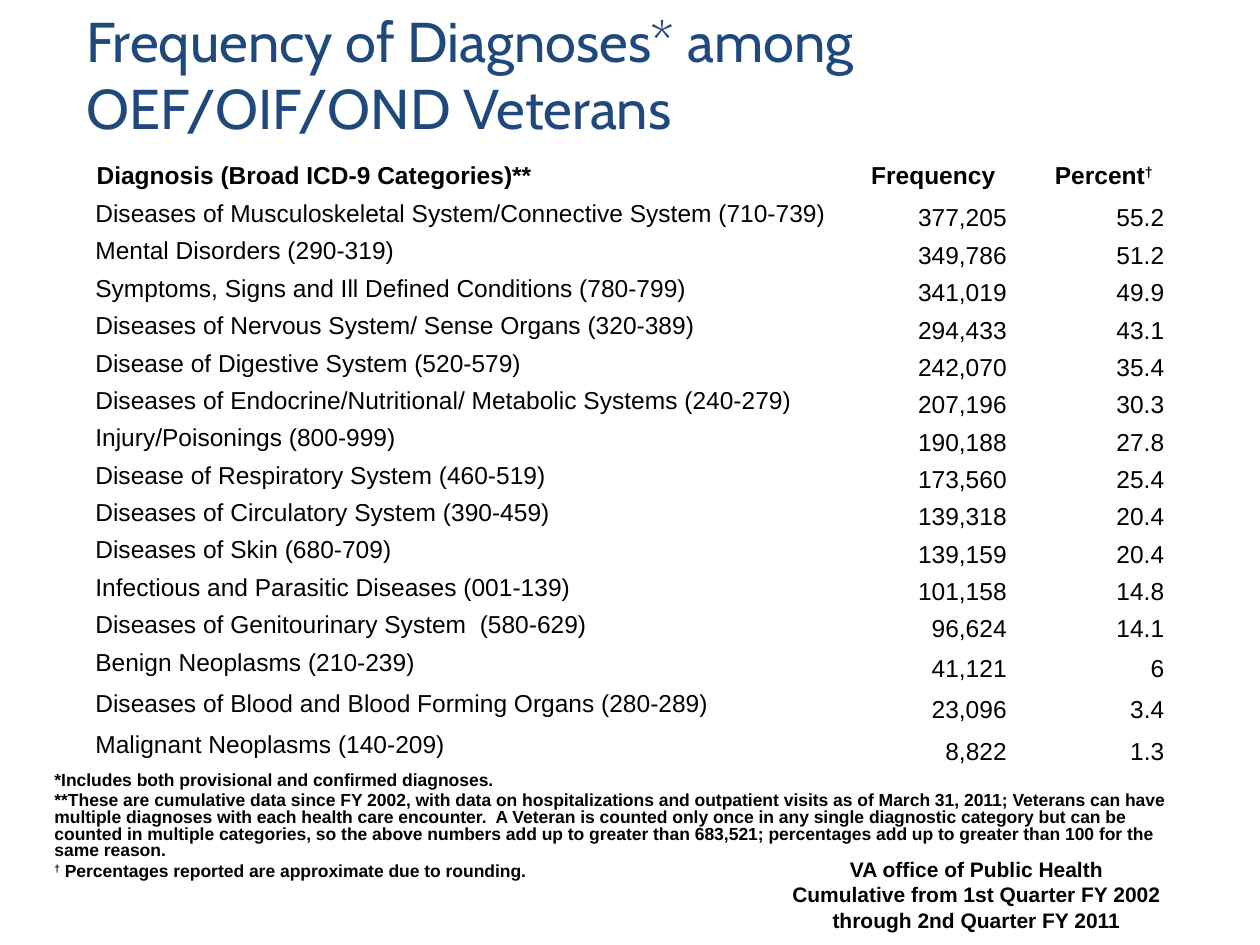
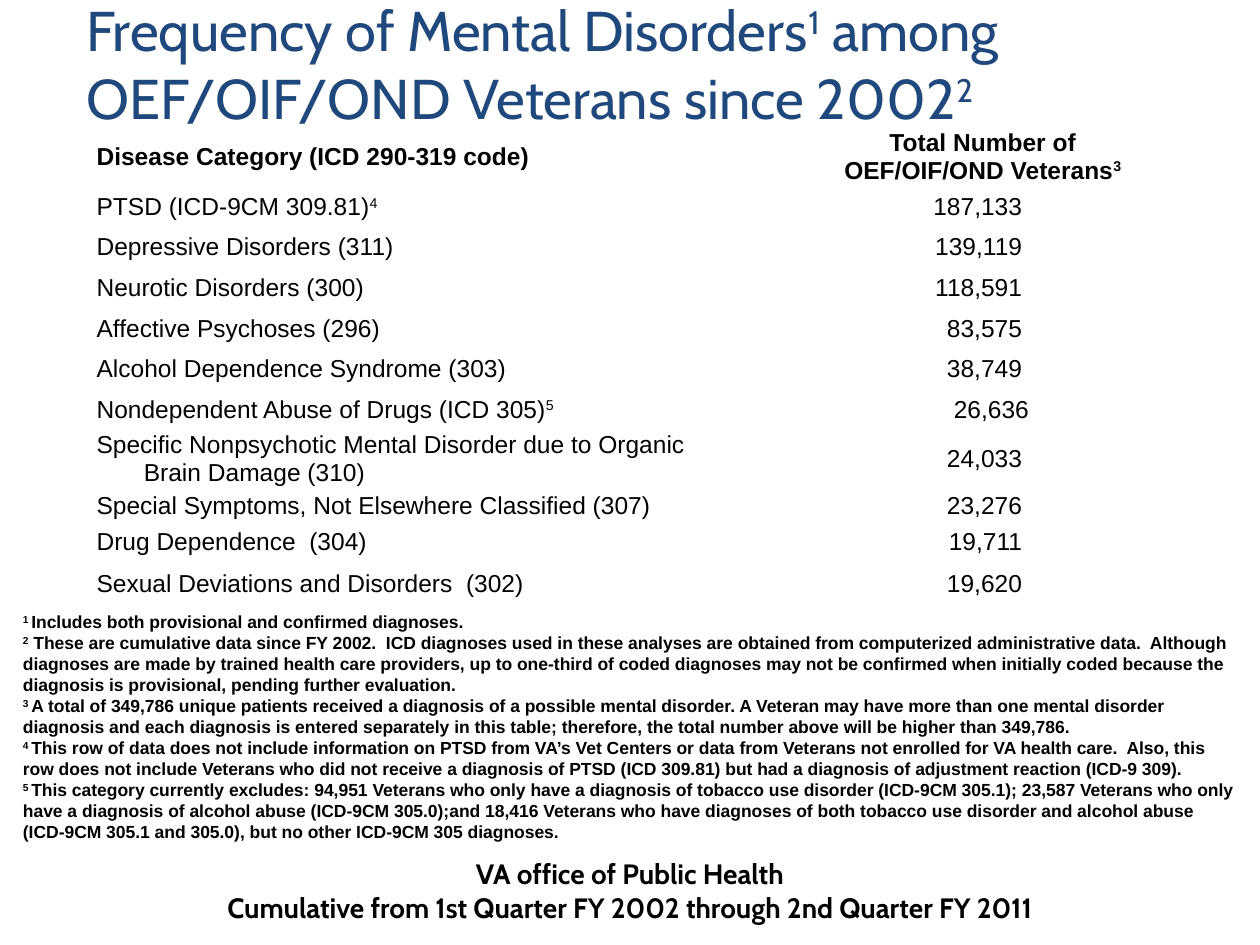
from pptx import Presentation
from pptx.dml.color import RGBColor
from pptx.enum.text import MSO_ANCHOR, MSO_AUTO_SIZE, PP_ALIGN
from pptx.util import Pt

NAVY = RGBColor(0x1F, 0x49, 0x7D)
BLACK = RGBColor(0, 0, 0)
LEFT, MID, RIGHT = PP_ALIGN.LEFT, PP_ALIGN.CENTER, PP_ALIGN.RIGHT

# Text between carets is superscript; a line feed is a line break.
CREDIT = [
    "VA office of Public Health",
    "Cumulative from 1st Quarter FY 2002 through 2nd Quarter FY 2011",
]

DIAGNOSES = [
    ("Diagnosis (Broad ICD-9 Categories)**", "Frequency", "Percent^†^"),
    ("Diseases of Musculoskeletal System/Connective System (710-739)", "377,205", "55.2"),
    ("Mental Disorders (290-319)", "349,786", "51.2"),
    ("Symptoms, Signs and Ill Defined Conditions (780-799)", "341,019", "49.9"),
    ("Diseases of Nervous System/ Sense Organs (320-389)", "294,433", "43.1"),
    ("Disease of Digestive System (520-579)", "242,070", "35.4"),
    ("Diseases of Endocrine/Nutritional/ Metabolic Systems (240-279)", "207,196", "30.3"),
    ("Injury/Poisonings (800-999)", "190,188", "27.8"),
    ("Disease of Respiratory System (460-519)", "173,560", "25.4"),
    ("Diseases of Circulatory System (390-459)", "139,318", "20.4"),
    ("Diseases of Skin (680-709)", "139,159", "20.4"),
    ("Infectious and Parasitic Diseases (001-139)", "101,158", "14.8"),
    ("Diseases of Genitourinary System  (580-629)", "96,624", "14.1"),
    ("Benign Neoplasms (210-239)", "41,121", "6"),
    ("Diseases of Blood and Blood Forming Organs (280-289)", "23,096", "3.4"),
    ("Malignant Neoplasms (140-209)", "8,822", "1.3"),
]
DIAGNOSIS_NOTES = [
    "*Includes both provisional and confirmed diagnoses.",
    "**These are cumulative data since FY 2002, with data on hospitalizations and outpatient "
    "visits as of March 31, 2011; Veterans can have multiple diagnoses with each health care "
    "encounter.  A Veteran is counted only once in any single diagnostic category but can be "
    "counted in multiple categories, so the above numbers add up to greater than 683,521; "
    "percentages add up to greater than 100 for the same reason.",
    "^†^ Percentages reported are approximate due to rounding.",
]

DISORDERS = [
    ("Disease Category (ICD 290-319 code)", "Total Number of OEF/OIF/OND Veterans^3^"),
    ("PTSD (ICD-9CM 309.81)^4^", "187,133 "),
    ("Depressive Disorders (311)", "139,119 "),
    ("Neurotic Disorders (300)", "118,591 "),
    ("Affective Psychoses (296)", "83,575 "),
    ("Alcohol Dependence Syndrome (303)", "38,749 "),
    ("Nondependent Abuse of Drugs (ICD 305)^5^", "26,636"),
    ("Specific Nonpsychotic Mental Disorder due to Organic\nBrain Damage (310)", "24,033 "),
    ("Special Symptoms, Not Elsewhere Classified (307)", "23,276 "),
    ("Drug Dependence  (304)", "19,711 "),
    ("Sexual Deviations and Disorders  (302)", "19,620 "),
]
DISORDER_NOTES = [
    "^1 ^Includes both provisional and confirmed diagnoses.",
    "^2^ These are cumulative data since FY 2002.  ICD diagnoses used in these analyses are "
    "obtained from computerized administrative data.  Although diagnoses are made by trained "
    "health care providers, up to one-third of coded diagnoses may not be confirmed when "
    "initially coded because the diagnosis is provisional, pending further evaluation.",
    "^3 ^A total of 349,786 unique patients received a diagnosis of a possible mental disorder. "
    "A Veteran may have more than one mental disorder diagnosis and each diagnosis is entered "
    "separately in this table; therefore, the total number above will be higher than 349,786.",
    "^4 ^This row of data does not include information on PTSD from VA’s Vet Centers or data "
    "from Veterans not enrolled for VA health care.  Also, this row does not include Veterans "
    "who did not receive a diagnosis of PTSD (ICD 309.81) but had a diagnosis of adjustment "
    "reaction (ICD-9 309).",
    "^5 ^This category currently excludes: 94,951 Veterans who only have a diagnosis of tobacco "
    "use disorder (ICD-9CM 305.1); 23,587 Veterans who only have a diagnosis of alcohol abuse "
    "(ICD-9CM 305.0);and 18,416 Veterans who have diagnoses of both tobacco use disorder and "
    "alcohol abuse (ICD-9CM 305.1 and 305.0), but no other ICD-9CM 305 diagnoses.",
]

HANG = Pt(27)


def write(para, text, size, bold=False, face="Arial", color=BLACK, align=LEFT):
    """Fill a paragraph, raising what stands between carets."""
    for i, part in enumerate(text.split("^")):
        for j, line in enumerate(part.split("\n")):
            if j:
                para.add_line_break()
                props = para._p.get_or_add_pPr()
                props.set("marL", str(HANG))
                props.set("indent", str(-HANG))
            if line:
                run = para.add_run()
                run.text = line
                if i % 2:
                    run.font._element.set("baseline", "30000")
    para.alignment = align
    font = para.font
    font.name, font.size, font.bold = face, Pt(size), bold
    font.color.rgb = color


def add_box(slide, area, lines, size, gap=0, pitch=None, **style):
    frame = slide.shapes.add_textbox(*map(Pt, area)).text_frame
    frame.word_wrap = True
    for i, line in enumerate(lines):
        para = frame.add_paragraph() if i else frame.paragraphs[0]
        write(para, line, size, **style)
        para.line_spacing = pitch
        para.space_before = Pt(gap if i else 0)


def add_grid(slide, top, rows, widths, heights, head, body):
    """Add a plain table; head and body give (align, anchor, margins) per column."""
    shape = slide.shapes.add_table(len(rows), len(widths), Pt(48), Pt(top),
                                   Pt(sum(widths)), Pt(sum(heights)))
    table = shape.table
    table.first_row = table.horz_banding = False
    for column, width in zip(table.columns, widths):
        column.width = Pt(width)
    for r, (texts, height) in enumerate(zip(rows, heights)):
        table.rows[r].height = Pt(height)
        for c, text in enumerate(texts):
            align, anchor, (left, above, right) = (body if r else head)[c]
            cell = table.cell(r, c)
            cell.fill.background()
            cell.vertical_anchor = anchor
            cell.margin_left, cell.margin_top = Pt(left), Pt(above)
            cell.margin_right, cell.margin_bottom = Pt(right), 0
            write(cell.text_frame.paragraphs[0], text, 14, bold=r == 0, align=align)


def add_slide(deck, title, top):
    slide = deck.slides.add_slide(deck.slide_layouts[5])
    shape = slide.shapes.title
    shape.left, shape.top, shape.width, shape.height = Pt(42), Pt(top), Pt(639), Pt(72)
    frame = shape.text_frame
    frame.auto_size, frame.vertical_anchor = MSO_AUTO_SIZE.NONE, MSO_ANCHOR.MIDDLE
    write(frame.paragraphs[0], title, 32, face="Cabin", color=NAVY)
    return slide


def main():
    deck = Presentation()
    deck.slide_width, deck.slide_height = Pt(720), Pt(540)
    center, base = MSO_ANCHOR.MIDDLE, MSO_ANCHOR.BOTTOM

    slide = add_slide(deck, "Frequency of Diagnoses* among OEF/OIF/OND Veterans", 6)
    pad, tight = (7.2, 0, 7.2), (0.7, 0.7, 0.7)
    add_grid(slide, 90, DIAGNOSES, [438, 90, 90], [21.35] * 13 + [22.5, 23.8, 23.8],
             [(LEFT, center, pad)] + [(RIGHT, center, pad)] * 2,
             [(LEFT, center, (6.5, 0.7, 0.7))] + [(RIGHT, base, tight)] * 2)
    add_box(slide, (24, 438, 649, 60), DIAGNOSIS_NOTES, 10, gap=2, pitch=0.8, bold=True)
    add_box(slide, (426, 486, 264, 48), CREDIT, 12, bold=True, align=MID)

    slide = add_slide(
        deck, "Frequency of Mental Disorders^1^ among OEF/OIF/OND Veterans since 2002^2^", 0)
    pad = (7.2, 0, 0)
    add_grid(slide, 72, DISORDERS, [408, 204],
             [35.3, 22.5] + [23.2] * 5 + [33, 20.6, 20.3, 28],
             [(LEFT, center, pad), (MID, center, pad)],
             [(LEFT, center, pad), (RIGHT, center, (7.2, 0, 72))])
    add_box(slide, (6, 345.6, 708, 140), DISORDER_NOTES, 10, bold=True)
    add_box(slide, (0, 486, 720, 54), CREDIT, 16, bold=True, face="Cabin", align=MID)

    deck.save("out.pptx")


if __name__ == "__main__":
    main()
